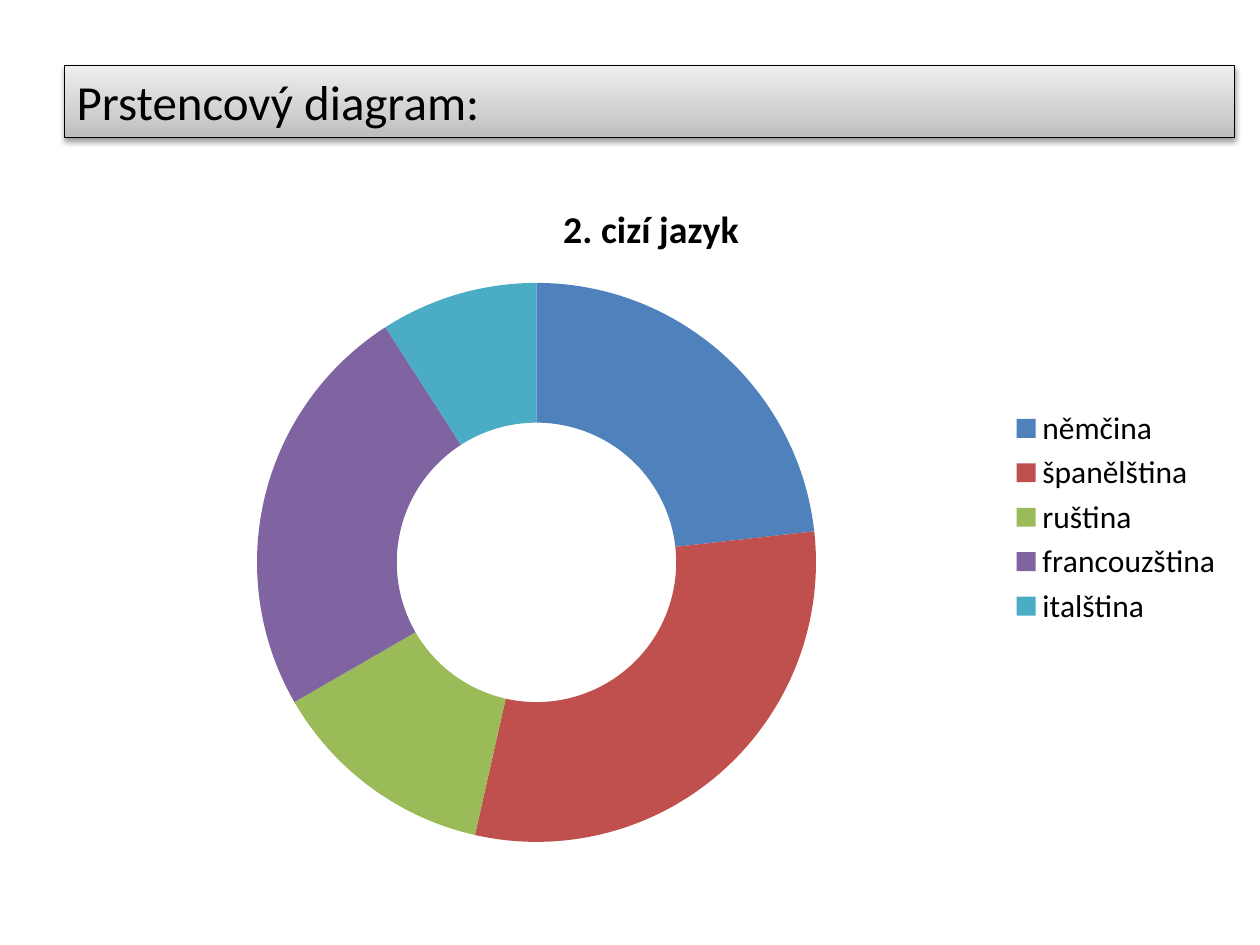
from dataclasses import dataclass

from lxml.etree import SubElement
from pptx import Presentation
from pptx.chart.data import CategoryChartData
from pptx.dml.color import RGBColor
from pptx.enum.chart import XL_CHART_TYPE, XL_LEGEND_POSITION
from pptx.enum.shapes import MSO_SHAPE
from pptx.enum.text import MSO_ANCHOR, PP_ALIGN
from pptx.oxml import parse_xml
from pptx.oxml.ns import nsdecls, qn
from pptx.util import Inches, Pt


@dataclass(frozen=True)
class Theme:
    font: str = "Calibri"
    ink: str = "000000"
    fade: tuple = ((0, "BDBDBD"), (35, "D1D1D1"), (100, "EEEEEE"))
    head: float = 28
    title: float = 21.6
    body: float = 18


@dataclass(frozen=True)
class Box:
    left: float
    top: float
    width: float
    height: float

    def emu(self) -> tuple:
        return tuple(map(Inches, (self.left, self.top, self.width, self.height)))


@dataclass(frozen=True)
class Slice:
    name: str
    value: int
    color: str


THEME = Theme()
TITLE = "2. cizí jazyk"
SLICES = (
    Slice("němčina", 23, "4F81BD"),
    Slice("španělština", 30, "C0504D"),
    Slice("ruština", 13, "9BBB59"),
    Slice("francouzština", 24, "8064A2"),
    Slice("italština", 9, "4BACC6"),
)


def style(font, size: float, bold: bool = False) -> None:
    font.name = THEME.font
    font.size = Pt(size)
    font.bold = bold
    font.color.rgb = RGBColor.from_string(THEME.ink)


def add_ring(slide, box: Box) -> None:
    data = CategoryChartData()
    data.categories = [part.name for part in SLICES]
    data.add_series(TITLE, [part.value for part in SLICES])
    chart = slide.shapes.add_chart(XL_CHART_TYPE.DOUGHNUT, *box.emu(), data).chart
    style(chart.font, THEME.body)

    # Title and legend
    chart.has_title = True
    chart.chart_title.include_in_layout = False
    para = chart.chart_title.text_frame.paragraphs[0]
    para.text = TITLE
    style(para.font, THEME.title, True)
    chart.has_legend = True
    chart.legend.position = XL_LEGEND_POSITION.RIGHT
    chart.legend.include_in_layout = False

    # Slice colours
    plot = chart.plots[0]
    plot.vary_by_categories = True
    for i, part in enumerate(SLICES):
        fill = plot.series[0].points[i].format.fill
        fill.solid()
        fill.fore_color.rgb = RGBColor.from_string(part.color)


def add_head(slide, box: Box, text: str) -> None:
    bar = slide.shapes.add_shape(MSO_SHAPE.RECTANGLE, *box.emu())
    bar.line.color.rgb = RGBColor.from_string(THEME.ink)
    bar.line.width = Pt(0.75)

    # Three-stop gradient, dark at the bottom
    bar.fill.gradient()
    bar.fill.gradient_angle = 90
    stops = bar.element.spPr.find(qn("a:gradFill")).find(qn("a:gsLst"))
    stops.clear()
    for place, color in THEME.fade:
        stop = SubElement(stops, qn("a:gs"), pos=str(place * 1000))
        SubElement(stop, qn("a:srgbClr"), val=color)

    # Soft shadow below
    bar.element.spPr.append(parse_xml(
        f'<a:effectLst {nsdecls("a")}>'
        f'<a:outerShdw blurRad="{Pt(3.1)}" dist="{Pt(1.6)}" dir="5400000" rotWithShape="0">'
        f'<a:srgbClr val="{THEME.ink}"><a:alpha val="38000"/></a:srgbClr>'
        '</a:outerShdw></a:effectLst>'))

    # Heading
    frame = bar.text_frame
    frame.word_wrap = True
    frame.vertical_anchor = MSO_ANCHOR.MIDDLE
    para = frame.paragraphs[0]
    para.text = text
    para.alignment = PP_ALIGN.LEFT
    style(para.font, THEME.head)


def main() -> None:
    deck = Presentation()
    deck.slide_width, deck.slide_height = Inches(10), Inches(7.5)
    slide = deck.slides.add_slide(deck.slide_layouts[6])
    add_ring(slide, Box(0.53, 1.39, 9.28, 5.43))
    add_head(slide, Box(0.51, 0.52, 9.29, 0.57), "Prstencový diagram:")
    deck.save("out.pptx")


if __name__ == "__main__":
    main()
